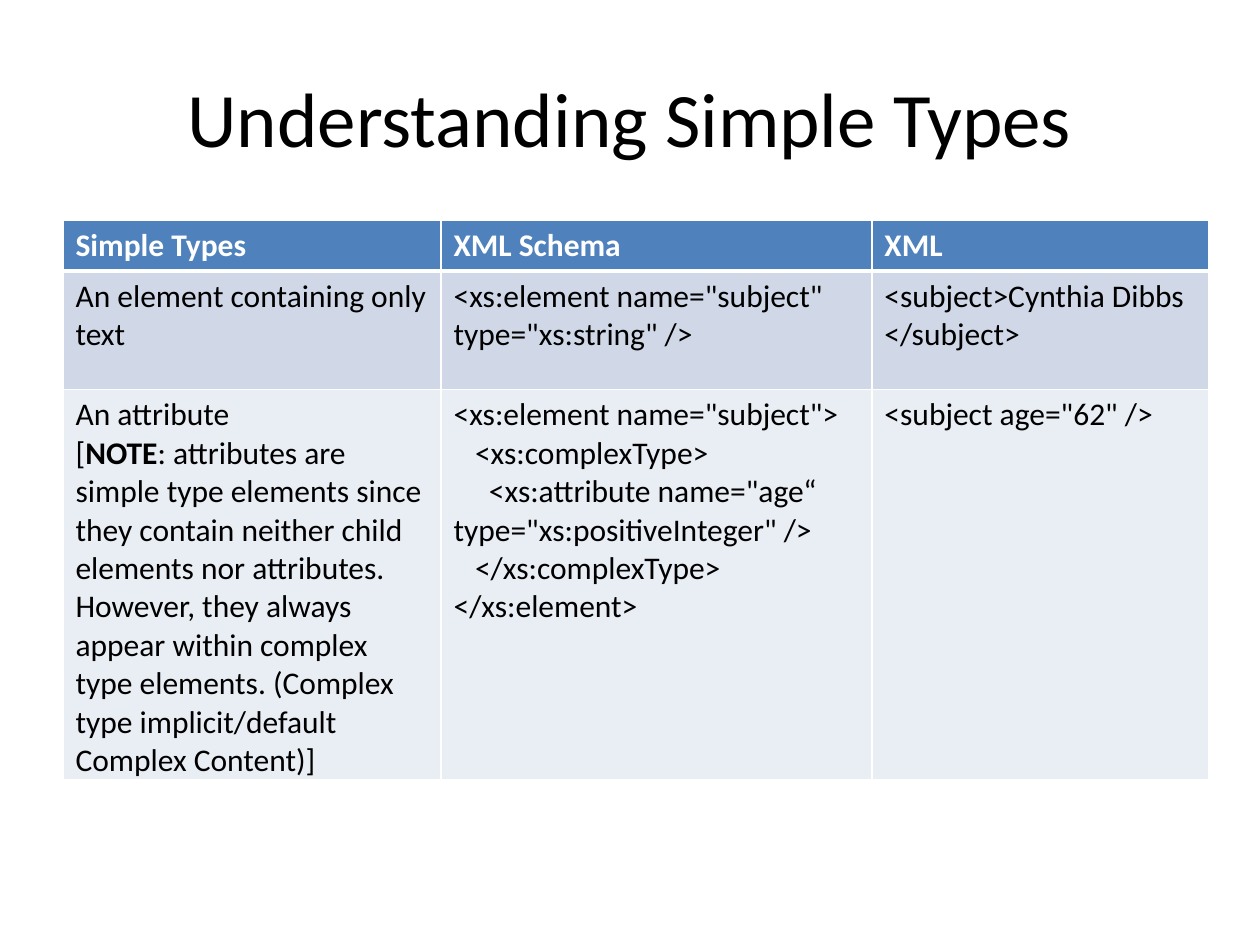
from lxml.etree import SubElement
from pptx import Presentation
from pptx.dml.color import RGBColor
from pptx.enum.text import MSO_ANCHOR, PP_ALIGN
from pptx.oxml.ns import qn
from pptx.util import Inches, Pt

TITLE_FORMAT = {"name": "Calibri", "size": Pt(44)}
CELL_FORMAT = {"name": "Calibri", "size": Pt(18)}
COLUMN_WIDTHS = [3, 3.42, 2.67]
ROW_HEIGHTS = [0.37, 0.94, 2.9]
ROW_FILLS = ["4F81BD", "D0D8E8", "E9EDF4"]
INDENT_STEPS = [0, 0.17, 0.28]

# Each cell lists its lines as (indent level, [(words, bold), ...]).
ROWS = [
    [
        [(0, [("Simple Types", True)])],
        [(0, [("XML Schema", True)])],
        [(0, [("XML", True)])],
    ],
    [
        [(0, [("An element containing only text", False)])],
        [(0, [('<xs:element name="subject" type="xs:string" />', False)])],
        [
            (0, [("<subject>Cynthia Dibbs", False)]),
            (0, [("</subject>", False)]),
        ],
    ],
    [
        [
            (0, [("An attribute", False)]),
            (0, [
                ("[", False),
                ("NOTE", True),
                (": attributes are simple type elements since they contain "
                 "neither child elements nor attributes. However, they always "
                 "appear within complex type elements. (Complex type "
                 "implicit/default Complex Content)]", False),
            ]),
        ],
        [
            (0, [('<xs:element name="subject">', False)]),
            (1, [("<xs:complexType>", False)]),
            (2, [('<xs:attribute name="age“ type="xs:positiveInteger" />', False)]),
            (1, [("</xs:complexType>", False)]),
            (0, [("</xs:element>", False)]),
        ],
        [(0, [('<subject age="62" />', False)])],
    ],
]


def color(value):
    """Turn a hex string into a colour."""
    return RGBColor.from_string(value)


def add_span(para, words, ink, formats):
    """Add a run of text and set its font from a dict."""
    span = para.add_run()
    span.text = words
    span.font.color.rgb = color(ink)
    for name, value in formats.items():
        setattr(span.font, name, value)


def add_title(page, box, words):
    """Place the centred title in the given box."""
    frame = page.shapes.add_textbox(*map(Inches, box)).text_frame
    frame.word_wrap = True
    frame.vertical_anchor = MSO_ANCHOR.MIDDLE
    para = frame.paragraphs[0]
    para.alignment = PP_ALIGN.CENTER
    add_span(para, words, "000000", TITLE_FORMAT)


def set_borders(cell, widths):
    """Draw white cell borders with the given widths in points."""
    properties = cell._tc.get_or_add_tcPr()
    for side, width in widths.items():
        line = SubElement(properties, qn(f"a:ln{side}"), w=str(Pt(width)))
        fill = SubElement(line, qn("a:solidFill"))
        SubElement(fill, qn("a:srgbClr"), val="FFFFFF")


def fill_cell(cell, lines, ink):
    """Write the lines of a cell, indenting the first line of each."""
    frame = cell.text_frame
    for index, (level, spans) in enumerate(lines):
        para = frame.add_paragraph() if index else frame.paragraphs[0]
        if level:
            indent = Inches(INDENT_STEPS[level])
            para._p.get_or_add_pPr().set("indent", str(indent))
        for words, bold in spans:
            add_span(para, words, ink, {**CELL_FORMAT, "bold": bold})


def add_types_table(page, box):
    """Place the table of simple types in the given box."""
    frame = page.shapes.add_table(len(ROWS), len(COLUMN_WIDTHS), *map(Inches, box))
    table = frame.table
    for column, width in zip(table.columns, COLUMN_WIDTHS):
        column.width = Inches(width)
    for row_index, (cells, height) in enumerate(zip(ROWS, ROW_HEIGHTS)):
        table.rows[row_index].height = Inches(height)
        top, bottom = (3 if row_index == edge else 1 for edge in (1, 0))
        for column_index, lines in enumerate(cells):
            cell = table.cell(row_index, column_index)
            set_borders(cell, {"L": 1, "R": 1, "T": top, "B": bottom})
            cell.fill.solid()
            cell.fill.fore_color.rgb = color(ROW_FILLS[row_index])
            fill_cell(cell, lines, "000000" if row_index else "FFFFFF")


def main():
    """Build and save the deck."""
    deck = Presentation()
    deck.slide_width, deck.slide_height = Inches(10), Inches(7.5)
    page = deck.slides.add_slide(deck.slide_layouts[6])
    add_title(page, (0.5, 0.3, 9, 1.25), "Understanding Simple Types")
    add_types_table(page, (0.5, 1.75, sum(COLUMN_WIDTHS), sum(ROW_HEIGHTS)))
    deck.save("out.pptx")


if __name__ == "__main__":
    main()
